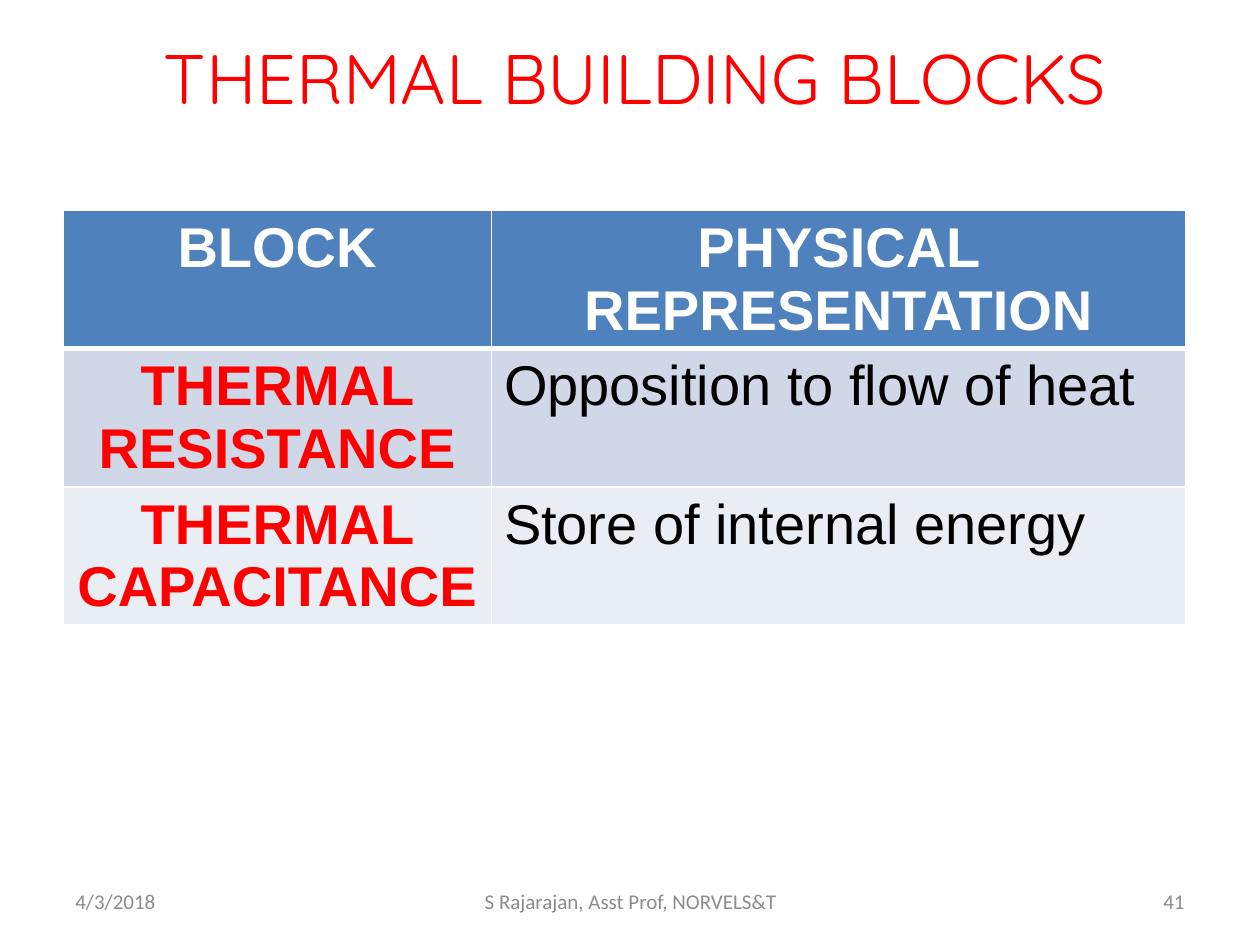
from pptx import Presentation
from pptx import util as u
from pptx.dml import color
from pptx.enum import text
from pptx.oxml import ns
from lxml import etree

COLORS = {"red": "FF0000", "white": "FFFFFF", "black": "000000", "gray": "8C8C8C",
          "header": "4F81BD", "band_dark": "D0D8E8", "band_light": "E9EDF4"}
LEFT, CENTER, RIGHT = text.PP_ALIGN.LEFT, text.PP_ALIGN.CENTER, text.PP_ALIGN.RIGHT


class SlideBuilder:
    def __init__(self, s):
        self.s = s

    def rgb(self, name):
        return color.RGBColor.from_string(COLORS[name])

    def add_text(self, tf, content, font, size, fill, align=LEFT, bold=False):
        tf.word_wrap = True
        p = tf.paragraphs[0]
        p.alignment = align
        r = p.add_run()
        r.text = content
        r.font.name, r.font.size, r.font.bold = font, u.Pt(size), bold
        r.font.color.rgb = self.rgb(fill)

    def title(self, content, x, y, w, h):
        sp = self.s.shapes.title
        sp.left, sp.top, sp.width, sp.height = map(u.Inches, (x, y, w, h))
        tf = sp.text_frame
        tf.auto_size = text.MSO_AUTO_SIZE.NONE
        tf.vertical_anchor = text.MSO_ANCHOR.MIDDLE
        self.add_text(tf, content, "Quicksand", 40, "red", CENTER)

    def footer(self, content, x, w, align):
        sp = self.s.shapes.add_textbox(*map(u.Inches, (x, 6.95, w, 0.4)))
        sp.text_frame.vertical_anchor = text.MSO_ANCHOR.MIDDLE
        self.add_text(sp.text_frame, content, "Calibri", 12, "gray", align)

    def borders(self, cell, widths):
        tcPr = cell._tc.get_or_add_tcPr()
        for side, width in zip("LRTB", widths):
            ln = etree.SubElement(tcPr, ns.qn("a:ln" + side), w=str(u.Pt(width)))
            fill = etree.SubElement(ln, ns.qn("a:solidFill"))
            etree.SubElement(fill, ns.qn("a:srgbClr"), val=COLORS["white"])

    def table(self, rows, x, y, col_widths, row_height):
        w, h = sum(col_widths), row_height * len(rows)
        frame = self.s.shapes.add_table(len(rows), len(col_widths),
                                        *map(u.Inches, (x, y, w, h)))
        tbl = frame.table
        for col, width in zip(tbl.columns, col_widths):
            col.width = u.Inches(width)
        fills = ["header", "band_dark", "band_light"]
        for i, row in enumerate(rows):
            tbl.rows[i].height = u.Inches(row_height)
            for j, content in enumerate(row):
                cell = tbl.cell(i, j)
                self.borders(cell, (1, 1, 3 if i == 1 else 1, 3 if i == 0 else 1))
                cell.fill.solid()
                cell.fill.fore_color.rgb = self.rgb(fills[i])
                strong = i == 0 or j == 0
                ink = "white" if i == 0 else "red" if j == 0 else "black"
                self.add_text(cell.text_frame, content, "Arial", 32, ink,
                              CENTER if strong else LEFT, strong)


def main():
    prs = Presentation()
    prs.slide_width, prs.slide_height = u.Inches(10), u.Inches(7.5)
    b = SlideBuilder(prs.slides.add_slide(prs.slide_layouts[5]))
    b.title("THERMAL BUILDING BLOCKS", -0.5, 0.26, 11.08, 0.7)
    b.table([("BLOCK", "PHYSICAL REPRESENTATION"),
             ("THERMAL RESISTANCE", "Opposition to flow of heat"),
             ("THERMAL CAPACITANCE", "Store of internal energy")],
            0.5, 1.67, (3.4, 5.51), 1.09)
    b.footer("4/3/2018", 0.5, 2.33, LEFT)
    b.footer("S Rajarajan, Asst Prof, NORVELS&T", 3.42, 3.17, CENTER)
    b.footer("41", 7.17, 2.33, RIGHT)
    prs.save("out.pptx")


if __name__ == "__main__":
    main()
